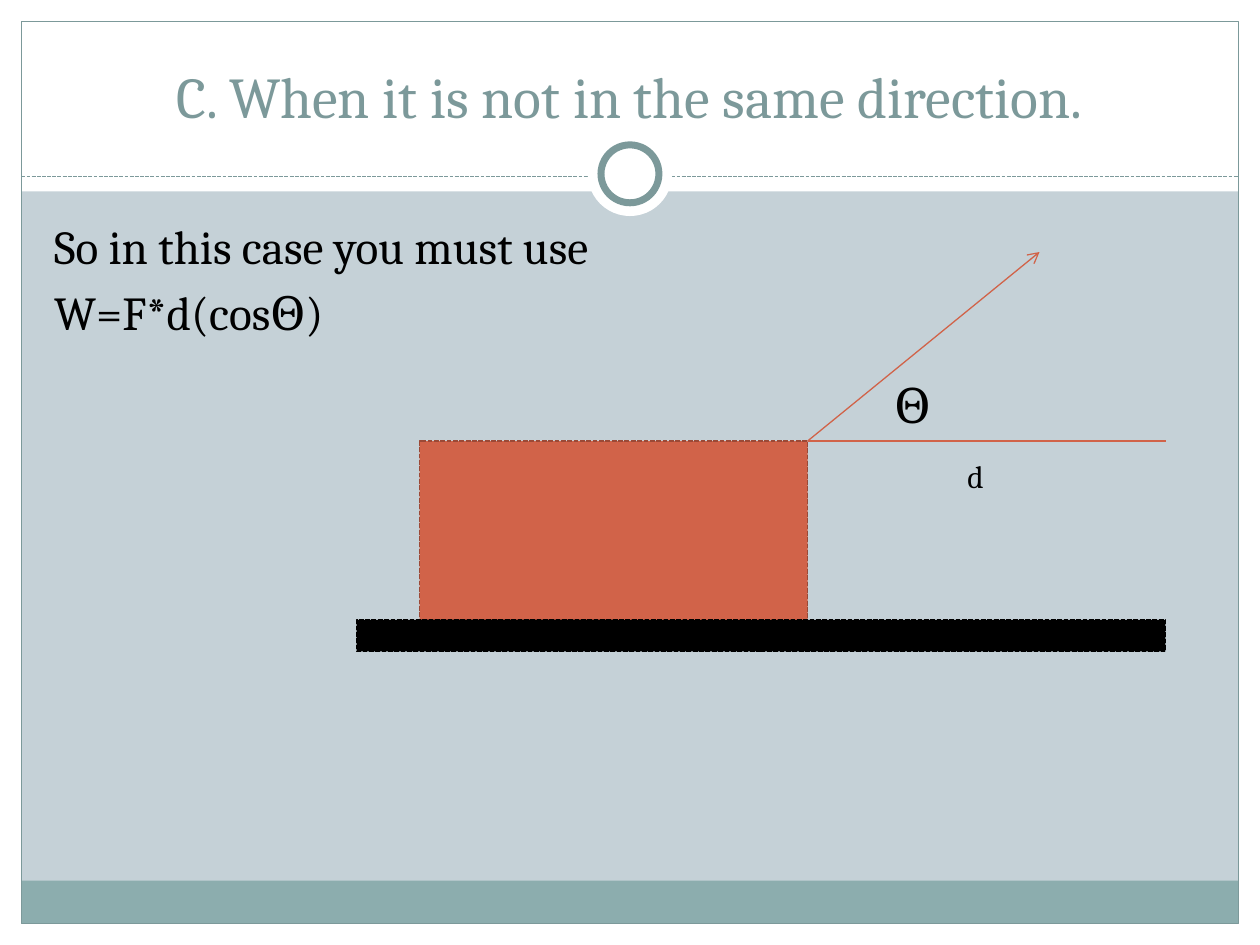
import pptx
import pptx.dml.color
import pptx.enum.dml
import pptx.enum.shapes
import pptx.enum.text
import pptx.oxml.ns
import pptx.util
from lxml import etree
from pptx.util import Inches

FONT = "Cambria"
WHITE, BLACK = "FFFFFF", "000000"
TEAL, BAND = "7C999A", "8CADAE"
ORANGE, BROWN = "D16349", "9B4936"
BACKGROUND = "C5D1D7"
RECTANGLE = pptx.enum.shapes.MSO_SHAPE.RECTANGLE
OVAL = pptx.enum.shapes.MSO_SHAPE.OVAL


def paint(target, color):
    target.solid()
    target.fore_color.rgb = pptx.dml.color.RGBColor.from_string(color)


def style_line(line, color, width, dashed=False):
    paint(line.fill, color)
    line.width = pptx.util.Pt(width)
    if dashed:
        line.dash_style = pptx.enum.dml.MSO_LINE.SQUARE_DOT


def add_child(parent, tag, **attributes):
    return etree.SubElement(parent, pptx.oxml.ns.qn(tag), **attributes)


def add_block(slide, kind, box, fill=None, line=None, width=0.75, dashed=False):
    block = slide.shapes.add_shape(kind, *map(Inches, box))
    block.shadow.inherit = False
    if fill:
        paint(block.fill, fill)
    else:
        block.fill.background()
    if line:
        style_line(block.line, line, width, dashed)
    else:
        block.line.fill.background()


def add_rule(slide, start, end, color, dashed=False, arrow=False):
    straight = pptx.enum.shapes.MSO_CONNECTOR.STRAIGHT
    rule = slide.shapes.add_connector(straight, *map(Inches, start + end))
    style_line(rule.line, color, 0.75, dashed)
    if arrow:
        add_child(rule.line._get_or_add_ln(), "a:tailEnd", type="arrow")
    add_child(rule._element.spPr, "a:effectLst")


def add_run(paragraph, text, size, color):
    run = paragraph.add_run()
    run.text = text
    run.font.name = FONT
    run.font.size = pptx.util.Pt(size)
    paint(run.font.fill, color)


def add_label(slide, box, text, size, wrap):
    label = slide.shapes.add_textbox(*map(Inches, box))
    label.text_frame.word_wrap = wrap
    label.text_frame.auto_size = pptx.enum.text.MSO_AUTO_SIZE.SHAPE_TO_FIT_TEXT
    add_run(label.text_frame.paragraphs[0], text, size, BLACK)


def place_placeholder(slide, placeholder, box, anchor):
    slide.shapes._spTree.append(placeholder._element)
    placeholder.left, placeholder.top, placeholder.width, placeholder.height = map(Inches, box)
    frame = placeholder.text_frame
    frame.auto_size = pptx.enum.text.MSO_AUTO_SIZE.NONE
    frame.vertical_anchor = anchor
    return frame


def draw_frame(slide, width, height):
    margin, header, divider = 0.17, 1.52, 1.4
    inner = width - 2 * margin
    for box in (
        (0, height - margin, width, margin),
        (0, 0, width, header),
        (0, 0, margin, height),
        (width - margin, 0, margin, height),
    ):
        add_block(slide, RECTANGLE, box, WHITE)
    add_block(slide, RECTANGLE, (margin, 6.99, inner, 0.34), BAND)
    add_block(slide, RECTANGLE, (margin, margin, inner, height - 2 * margin), line=TEAL)
    add_rule(slide, (margin, divider), (width - margin, divider), TEAL, dashed=True)
    for diameter, outline in ((0.67, None), (0.46, TEAL)):
        left, top = (width - diameter) / 2, 1.38 - diameter / 2
        add_block(slide, OVAL, (left, top, diameter, diameter), WHITE, outline, 4)


def write_title(slide, box, text):
    frame = place_placeholder(slide, slide.shapes.title, box, pptx.enum.text.MSO_ANCHOR.BOTTOM)
    heading = frame.paragraphs[0]
    heading.alignment = pptx.enum.text.PP_ALIGN.CENTER
    add_run(heading, text, 33, TEAL)


def write_body(slide, box, statements):
    frame = place_placeholder(slide, slide.placeholders[1], box, pptx.enum.text.MSO_ANCHOR.TOP)
    for index, statement in enumerate(statements):
        paragraph = frame.add_paragraph() if index else frame.paragraphs[0]
        paragraph.space_before = pptx.util.Pt(5.4)
        properties = paragraph._p.get_or_add_pPr()
        properties.set("marL", str(Inches(0.3)))
        properties.set("indent", str(Inches(-0.3)))
        add_child(properties, "a:buNone")
        add_run(paragraph, statement, 27, BLACK)


def draw_force_diagram(slide, left, top, width, height):
    right, ground = left + width, top + height - 0.25
    crate_left, crate_top, crate_width = left + 0.5, top + 1.5, 3.08
    corner = (crate_left + crate_width, crate_top)
    crate = (crate_left, crate_top, crate_width, ground - crate_top)
    add_block(slide, RECTANGLE, crate, ORANGE, BROWN, 0.9, True)
    add_block(slide, RECTANGLE, (left, ground, width, 0.25), BLACK, BLACK, 0.9, True)
    add_rule(slide, corner, (right - 1, top), ORANGE, arrow=True)
    add_rule(slide, corner, (right, crate_top), ORANGE)
    add_label(slide, (left + 4.75, top + 1.58, 0.54, 0.4), "d", 18, True)
    add_label(slide, (left + 4.17, top + 0.92, 0.49, 0.57), "Θ", 28, False)


def main():
    deck = pptx.Presentation()
    deck.slide_width, deck.slide_height = Inches(10), Inches(7.5)
    slide = deck.slides.add_slide(deck.slide_layouts[1])
    paint(slide.background.fill, BACKGROUND)
    draw_frame(slide, 10, 7.5)
    write_title(slide, (0.33, 0.25, 9.33, 0.83), "C. When it is not in the same direction.")
    write_body(slide, (0.33, 1.67, 9.3, 5), ("So in this case you must use", "W=F*d(cosΘ)"))
    draw_force_diagram(slide, 2.83, 2, 6.42, 3.17)
    deck.save("out.pptx")


if __name__ == "__main__":
    main()
